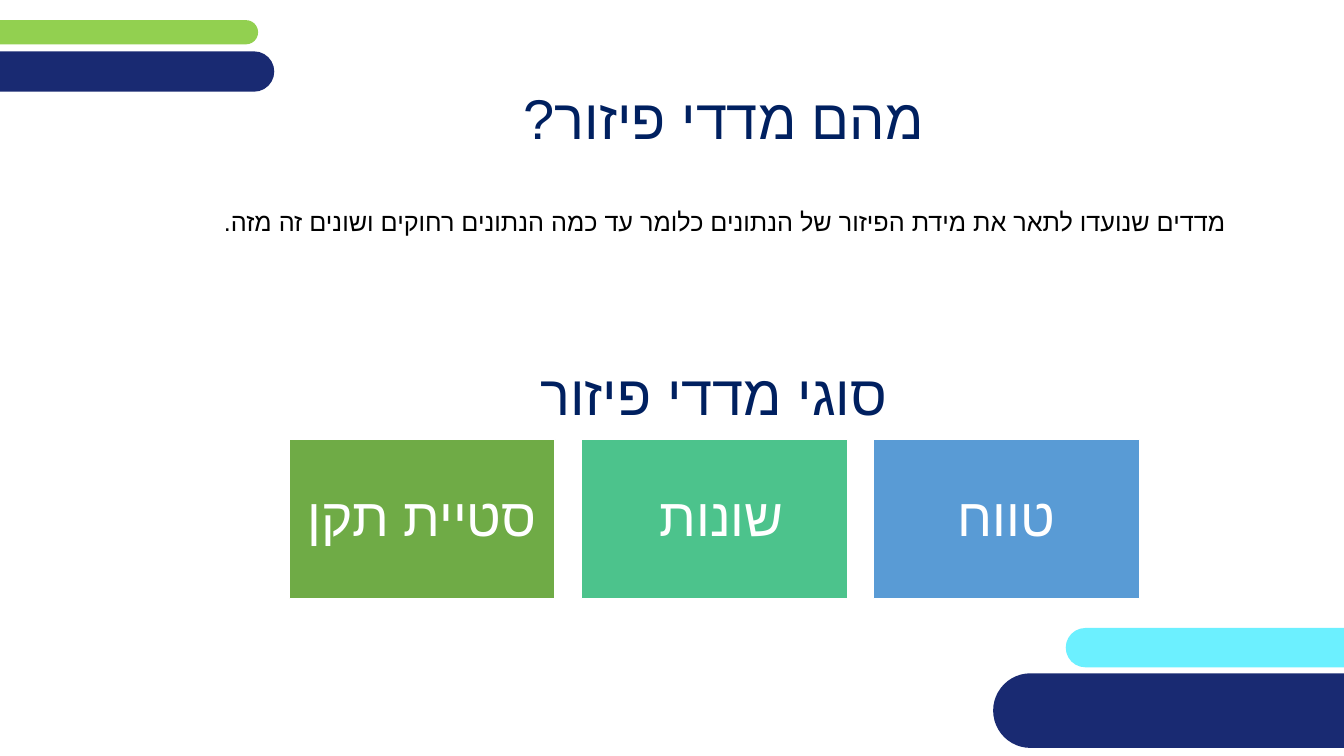
from pptx import Presentation
from pptx.dml.color import RGBColor
from pptx.enum.shapes import MSO_SHAPE
from pptx.enum.text import MSO_ANCHOR, PP_ALIGN
from pptx.util import Inches, Pt
from lxml.etree import SubElement
from pptx.oxml.ns import qn

FONT = "Arial"
NAVY = "192A72"
HEADING = "002060"


def rgb(value):
    return RGBColor.from_string(value)


def add_block(s, kind, box, fill, line=None):
    sp = s.shapes.add_shape(kind, *map(Inches, box))
    sp.shadow.inherit = False
    sp.fill.solid()
    sp.fill.fore_color.rgb = rgb(fill)
    if line:
        sp.line.color.rgb = rgb(line)
        sp.line.width = Pt(1)
    else:
        sp.line.fill.background()
    return sp


def write_rtl(tf, text, size, color, align=PP_ALIGN.CENTER, anchor=MSO_ANCHOR.MIDDLE):
    tf.word_wrap = True
    tf.vertical_anchor = anchor
    p = tf.paragraphs[0]
    p.alignment = align
    p._p.get_or_add_pPr().set("rtl", "1")
    r = p.add_run()
    r.text = text
    r.font.size = Pt(size)
    r.font.name = FONT
    r.font.color.rgb = rgb(color)
    # Hebrew takes its typeface from the complex-script font
    rPr = r._r.get_or_add_rPr()
    rPr.set("lang", "he-IL")
    SubElement(rPr, qn("a:cs")).set("typeface", FONT)
    return p


def add_text(s, box, *args, **kwargs):
    tf = s.shapes.add_textbox(*map(Inches, box)).text_frame
    write_rtl(tf, *args, **kwargs)


def add_corner_bars(s):
    bars = [
        ((10.57, 6.23, 5.21, 0.39), "6CF0FF"),
        ((-0.28, 0.2, 2.84, 0.24), "92D050"),
        ((-0.53, 0.51, 3.25, 0.4), NAVY),
        ((9.85, 6.68, 4.11, 0.74), NAVY),
    ]
    for box, fill in bars:
        sp = add_block(s, MSO_SHAPE.ROUNDED_RECTANGLE, box, fill)
        sp.adjustments[0] = 0.5


def add_cards(s, box, cards, gap=0.26):
    """Equal cards, laid out from right to left."""
    left, top, width, height = box
    card_width = (width - gap * (len(cards) - 1)) / len(cards)
    for i, (text, fill) in enumerate(cards):
        x = left + width - card_width - i * (card_width + gap)
        sp = add_block(s, MSO_SHAPE.RECTANGLE, (x, top, card_width, height), fill, "FFFFFF")
        tf = sp.text_frame
        tf.margin_left = tf.margin_right = Inches(0.16)
        tf.margin_top = tf.margin_bottom = Inches(0.16)
        write_rtl(tf, text, 38, "FFFFFF").line_spacing = 0.9


def build_slide(prs):
    s = prs.slides.add_slide(prs.slide_layouts[6])
    add_corner_bars(s)

    # Definition
    add_text(s, (1.91, 0.77, 10.54, 0.79), "מהם מדדי פיזור?", 40, HEADING)
    add_text(s, (1.91, 2, 10.35, 0.4),
             "מדדים שנועדו לתאר את מידת הפיזור של הנתונים כלומר עד כמה הנתונים רחוקים ושונים זה מזה.",
             18, "000000", align=PP_ALIGN.RIGHT, anchor=MSO_ANCHOR.TOP)

    # Types of measure
    add_text(s, (1.81, 3.5, 10.54, 0.79), "סוגי מדדי פיזור", 40, HEADING)
    add_cards(s, (2.87, 4.36, 8.43, 1.58), [
        ("טווח", "599BD5"),
        ("שונות ", "4CC38C"),
        ("סטיית תקן", "6FAB46"),
    ])


def main():
    prs = Presentation()
    prs.slide_width = Inches(13.33)
    prs.slide_height = Inches(7.5)
    build_slide(prs)
    prs.save("out.pptx")


if __name__ == "__main__":
    main()
